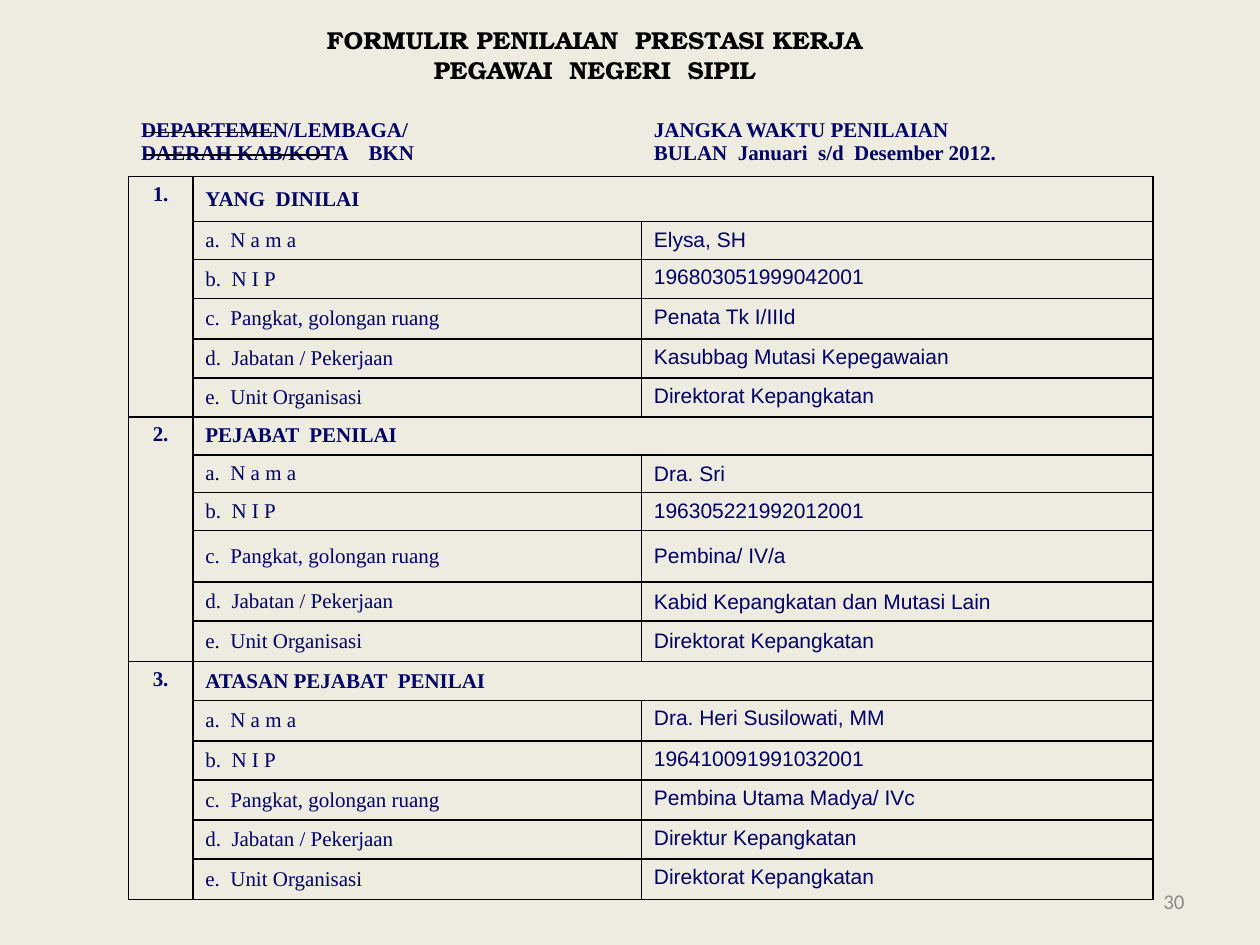
from dataclasses import dataclass

from lxml.etree import SubElement
from pptx import Presentation
from pptx.dml.color import RGBColor
from pptx.enum.shapes import MSO_CONNECTOR as Connector
from pptx.enum.text import MSO_ANCHOR as Anchor, PP_ALIGN as Align
from pptx.oxml.ns import qn
from pptx.util import Inches, Pt


@dataclass(frozen=True)
class Theme:
    background: str = "EEECE1"
    black: str = "000000"
    navy: str = "000066"
    gray: str = "8C8C8C"
    title_font: str = "TeX Gyre Bonum"
    form_font: str = "Times New Roman"
    entry_font: str = "Arial"
    number_font: str = "Calibri"
    title_size: int = 14
    body_size: int = 12
    border_width: float = 1
    strike_width: float = 0.75


class FormSlide:
    def __init__(self, presentation, theme):
        self.theme = theme
        self.slide = presentation.slides.add_slide(presentation.slide_layouts[6])
        fill = self.slide.background.fill
        fill.solid()
        fill.fore_color.rgb = RGBColor.from_string(theme.background)

    def set_lines(self, frame, lines, font, size, color, bold=False, align=Align.LEFT):
        for index, line in enumerate(lines):
            paragraph = frame.paragraphs[0] if index == 0 else frame.add_paragraph()
            paragraph.text = line
            paragraph.alignment = align
            paragraph.font.name = font
            paragraph.font.size = Pt(size)
            paragraph.font.bold = bold
            paragraph.font.color.rgb = RGBColor.from_string(color)

    def text(self, box, lines, font, size, color, bold=False, align=Align.LEFT):
        shape = self.slide.shapes.add_textbox(*map(Inches, box))
        shape.text_frame.word_wrap = True
        shape.text_frame.vertical_anchor = Anchor.MIDDLE
        self.set_lines(shape.text_frame, lines, font, size, color, bold, align)

    def strike(self, left, right, y):
        line = self.slide.shapes.add_connector(
            Connector.STRAIGHT, Inches(left), Inches(y), Inches(right), Inches(y))
        line.line.width = Pt(self.theme.strike_width)
        line.line.color.rgb = RGBColor.from_string(self.theme.black)
        SubElement(line._element.spPr, qn("a:effectLst"))

    def table(self, left, top, widths, heights):
        frame = self.slide.shapes.add_table(
            len(heights), len(widths), Inches(left), Inches(top),
            Inches(sum(widths)), Inches(sum(heights)))
        table = frame.table
        table.first_row = table.horz_banding = False
        for column, width in zip(table.columns, widths):
            column.width = Inches(width)
        for index, height in enumerate(heights):
            table.rows[index].height = Inches(height)
            for cell in table.rows[index].cells:
                self.borders(cell, "B" if index == 0 else "LRTB")
                cell.fill.background()
        return table

    def borders(self, cell, visible):
        properties = cell._tc.get_or_add_tcPr()
        for side in "LRTB":
            line = SubElement(properties, qn(f"a:ln{side}"))
            if side in visible:
                line.set("w", str(Pt(self.theme.border_width)))
                fill = SubElement(line, qn("a:solidFill"))
                SubElement(fill, qn("a:srgbClr")).set("val", self.theme.black)
            else:
                SubElement(line, qn("a:noFill"))

    def cell(self, cell, lines, font, bold=False, align=Align.LEFT, anchor=Anchor.TOP):
        cell.vertical_anchor = anchor
        self.set_lines(cell.text_frame, lines, font, self.theme.body_size,
                       self.theme.navy, bold, align)

    def section(self, table, top_row, number, heading, entries, entry_anchor):
        font = self.theme.form_font
        number_cell = table.cell(top_row, 0)
        number_cell.merge(table.cell(top_row + len(entries), 0))
        self.cell(number_cell, [f"{number}."], font, True, Align.CENTER)
        heading_cell = table.cell(top_row, 1)
        heading_cell.merge(table.cell(top_row, 2))
        self.cell(heading_cell, [heading], font, True, anchor=Anchor.MIDDLE)
        for row, (label, entry) in enumerate(zip(LABELS, entries), top_row + 1):
            self.cell(table.cell(row, 1), [label], font, anchor=Anchor.MIDDLE)
            self.cell(table.cell(row, 2), [entry], self.theme.entry_font,
                      anchor=entry_anchor)


LABELS = ["a.  N a m a", "b.  N I P", "c.  Pangkat, golongan ruang",
          "d.  Jabatan / Pekerjaan", "e.  Unit Organisasi"]
SECTIONS = [
    ("YANG  DINILAI", Anchor.TOP,
     ["Elysa, SH", "196803051999042001", "Penata Tk I/IIId",
      "Kasubbag Mutasi Kepegawaian", "Direktorat Kepangkatan"]),
    ("PEJABAT  PENILAI", Anchor.MIDDLE,
     ["Dra. Sri", "196305221992012001", "Pembina/ IV/a",
      "Kabid Kepangkatan dan Mutasi Lain", "Direktorat Kepangkatan"]),
    ("ATASAN PEJABAT  PENILAI", Anchor.TOP,
     ["Dra. Heri Susilowati, MM", "196410091991032001", "Pembina Utama Madya/ IVc",
      "Direktur Kepangkatan", "Direktorat Kepangkatan"]),
]
COLUMN_WIDTHS = [0.51, 3.56, 4.06]
ROW_HEIGHTS = [0.51,
               0.36, 0.3, 0.31, 0.32, 0.31, 0.31,
               0.3, 0.3, 0.3, 0.41, 0.31, 0.32,
               0.31, 0.32, 0.31, 0.32, 0.31, 0.32]


def main():
    theme = Theme()
    presentation = Presentation()
    presentation.slide_width = Inches(10)
    presentation.slide_height = Inches(7.5)
    form = FormSlide(presentation, theme)

    form.text((7.17, 6.95, 2.33, 0.4), ["30"], theme.number_font,
              theme.body_size, theme.gray, align=Align.RIGHT)
    form.text((1.96, 0.15, 5.52, 0.57),
              ["FORMULIR PENILAIAN  PRESTASI KERJA", "PEGAWAI  NEGERI  SIPIL"],
              theme.title_font, theme.title_size, theme.black, True, Align.CENTER)

    table = form.table(1.02, 0.89, COLUMN_WIDTHS, ROW_HEIGHTS)
    table.cell(0, 0).merge(table.cell(0, 1))
    form.cell(table.cell(0, 0), ["DEPARTEMEN/LEMBAGA/", "DAERAH KAB/KOTA    BKN"],
              theme.form_font, True)
    form.cell(table.cell(0, 2),
              ["JANGKA WAKTU PENILAIAN", "BULAN  Januari  s/d  Desember 2012."],
              theme.form_font, True)
    for index, (heading, anchor, entries) in enumerate(SECTIONS):
        top_row = 1 + index * (len(LABELS) + 1)
        form.section(table, top_row, index + 1, heading, entries, anchor)

    form.strike(1.15, 2.18, 1.05)
    form.strike(1.15, 2.6, 1.23)
    presentation.save("out.pptx")


if __name__ == "__main__":
    main()
